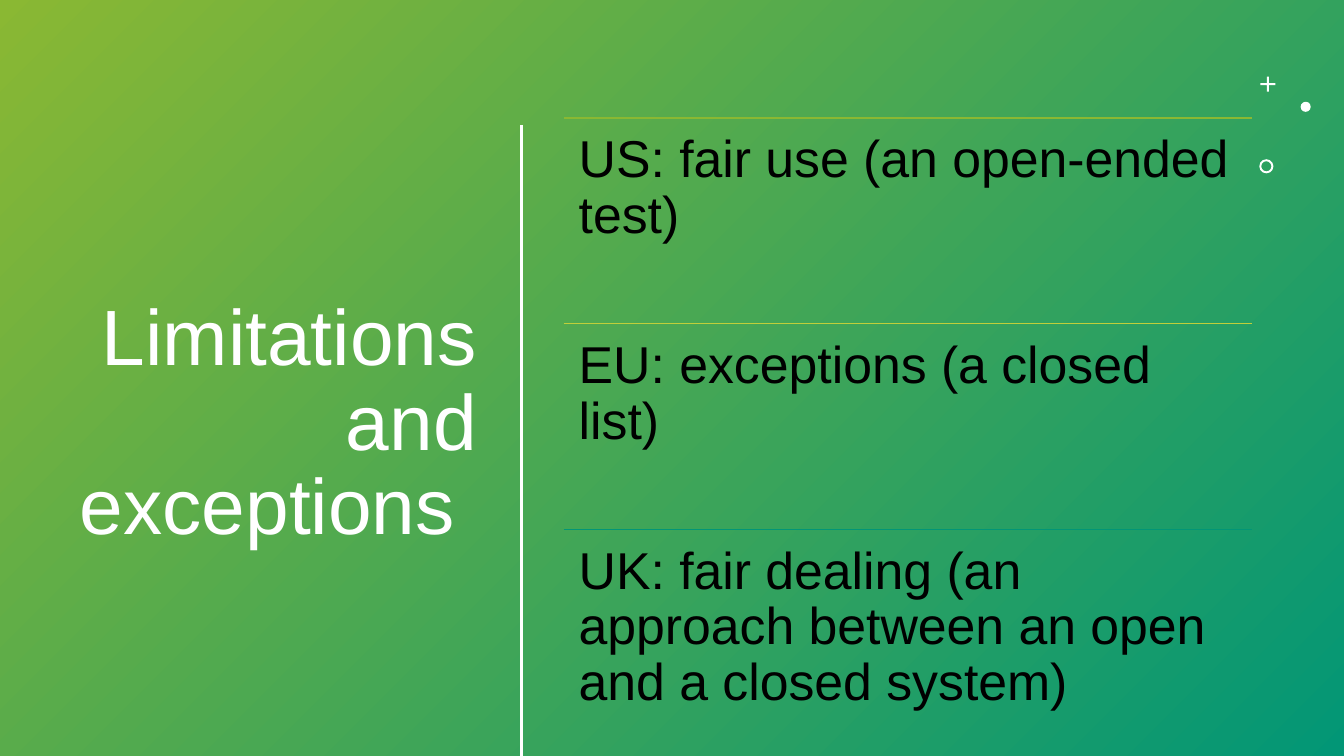
from pptx import Presentation
from pptx.dml.color import RGBColor
from pptx.enum.shapes import MSO_CONNECTOR as Connector, MSO_SHAPE as Shape
from pptx.enum.text import MSO_ANCHOR as Anchor, MSO_AUTO_SIZE as AutoSize, PP_ALIGN as Align
from pptx.oxml.ns import qn
from pptx.util import Inches, Pt
from lxml import etree

WIDTH, HEIGHT = 13.33, 7.5
WHITE, BLACK, LIME, YELLOW, TEAL = "FFFFFF", "000000", "8AB833", "C0CF3A", "029676"
RULES = [
    ("US: fair use (an open-ended test)", LIME),
    ("EU: exceptions (a closed list)", YELLOW),
    ("UK: fair dealing (an approach between an open and a closed system)", TEAL),
]


def color(value):
    return RGBColor.from_string(value)


def write(frame, text, size, ink, align=Align.LEFT, anchor=Anchor.TOP, inset=0.1):
    frame.word_wrap = True
    frame.auto_size = AutoSize.NONE
    frame.vertical_anchor = anchor
    frame.margin_left = frame.margin_right = Inches(inset)
    frame.margin_top = frame.margin_bottom = Inches(inset if inset > 0.1 else 0.05)
    para = frame.paragraphs[0]
    para.alignment, para.line_spacing = align, 0.9
    para.space_before = Pt(0)
    span = para.add_run()
    span.text = text
    span.font.name, span.font.size = "Arial", Pt(size)
    span.font.color.rgb = color(ink)


def add_line(page, start, end, ink, weight):
    line = page.shapes.add_connector(Connector.STRAIGHT, *map(Inches, start + end))
    line.line.color.rgb = color(ink)
    line.line.width = Pt(weight)
    etree.SubElement(line._element.spPr, qn("a:effectLst"))


def add_plain_shape(page, kind, box):
    shape = page.shapes.add_shape(kind, *map(Inches, box))
    shape.shadow.inherit = False
    shape.line.fill.background()
    return shape


def add_backdrop(page, box):
    backdrop = add_plain_shape(page, Shape.RECTANGLE, box)
    backdrop.fill.gradient()
    backdrop.fill.gradient_angle = 315
    for stop, ink, position in zip(backdrop.fill.gradient_stops, (LIME, TEAL), (0, 1)):
        stop.color.rgb = color(ink)
        stop.position = position
    # Keep the title in front
    page.shapes.title._element.addprevious(backdrop._element)


def add_title(page, box, text):
    title = page.shapes.title
    title.left, title.top, title.width, title.height = map(Inches, box)
    write(title.text_frame, text, 56, WHITE, align=Align.RIGHT, anchor=Anchor.MIDDLE)


def add_ornaments(page, left, top):
    # Plus, dot and ring: offset, size and thickness adjustment
    for kind, x, y, size, adjustment in [
        (Shape.CROSS, 0.01, 0, 0.15, 0.43),
        (Shape.OVAL, 0.41, 0.25, 0.1, None),
        (Shape.DONUT, 0, 0.82, 0.14, 0.14),
    ]:
        ornament = add_plain_shape(page, kind, (left + x, top + y, size, size))
        ornament.fill.solid()
        ornament.fill.fore_color.rgb = color(WHITE)
        if adjustment:
            ornament.adjustments[0] = adjustment


def add_rules(page, box, rules):
    left, top, width, height = box
    row = height / len(rules)
    for index, (text, ink) in enumerate(rules):
        y = top + index * row
        add_line(page, (left, y), (left + width, y), ink, 1)
        area = page.shapes.add_textbox(*map(Inches, (left, y, width, row)))
        write(area.text_frame, text, 37, BLACK, inset=0.15)


def main():
    deck = Presentation()
    deck.slide_width, deck.slide_height = Inches(WIDTH), Inches(HEIGHT)
    page = deck.slides.add_slide(deck.slide_layouts[5])
    add_backdrop(page, (0, 0, WIDTH, HEIGHT))
    add_title(page, (0.52, 1.16, 4.31, 6.11), "Limitations and exceptions ")
    add_ornaments(page, 12.49, 0.76)
    # Divider between title and list
    add_line(page, (5.17, 1.24), (5.17, HEIGHT), WHITE, 2)
    add_rules(page, (5.59, 1.17, 6.83, 6.12), RULES)
    deck.save("out.pptx")


if __name__ == "__main__":
    main()
